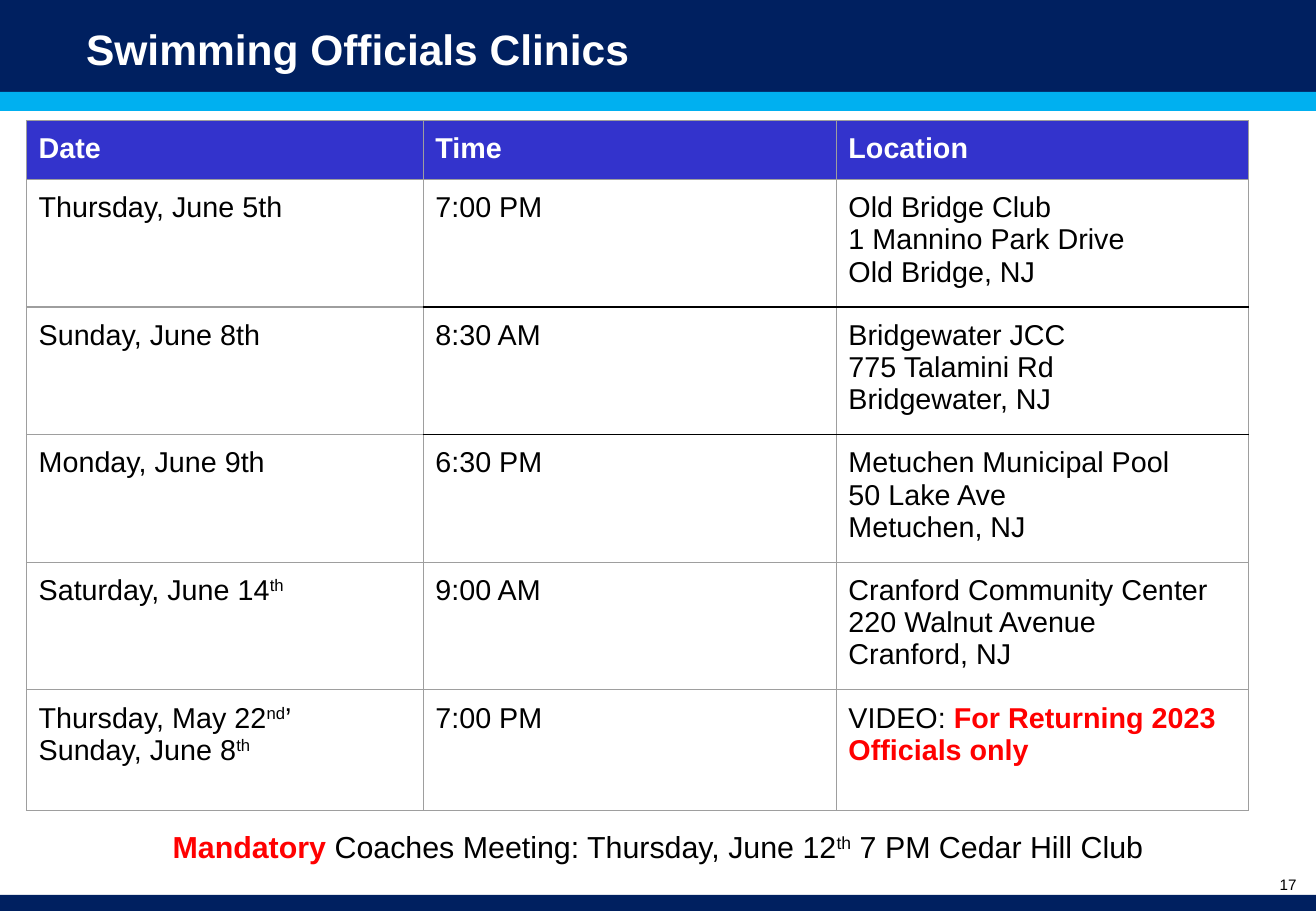
import pptx
import pptx.dml.color
import pptx.enum.shapes
import pptx.enum.text
import pptx.oxml
import pptx.oxml.ns
import pptx.util

Pt = pptx.util.Pt
ALIGN = pptx.enum.text.PP_ALIGN
ANCHOR = pptx.enum.text.MSO_ANCHOR
COLORS = {
    "navy": "002060", "sky": "00B0F0", "header": "3333CC", "grid": "9E9E9E",
    "black": "000000", "white": "FFFFFF", "red": "FF0000",
}
STYLES = {
    "body": {"bold": False, "color": "black"},
    "sup": {"bold": False, "color": "black", "baseline": "30000"},
    "alert": {"bold": True, "color": "red"},
    "heading": {"bold": True, "color": "white"},
}
HEADERS = ["Date", "Time", "Location"]
CLINICS = [
    (["Thursday, June 5th"], "7:00 PM",
     ["Old Bridge Club", "1 Mannino Park Drive", "Old Bridge, NJ"]),
    (["Sunday, June 8th"], "8:30 AM",
     ["Bridgewater JCC", "775 Talamini Rd", "Bridgewater, NJ"]),
    (["Monday, June 9th"], "6:30 PM",
     ["Metuchen Municipal Pool", "50 Lake Ave", "Metuchen, NJ"]),
    ([[("Saturday, June 14", "body"), ("th", "sup")]], "9:00 AM",
     ["Cranford Community Center", "220 Walnut Avenue", "Cranford, NJ"]),
    ([[("Thursday, May 22", "body"), ("nd", "sup"), ("’", "body")],
      [("Sunday, June 8", "body"), ("th", "sup")]], "7:00 PM",
     [[("VIDEO: ", "body"), ("For Returning 2023 Officials only", "alert")]]),
]
MEETING = [
    ("Mandatory", "alert"), (" Coaches Meeting: Thursday, June 12", "body"),
    ("th", "sup"), (" 7 PM Cedar Hill Club", "body"),
]


class Deck:
    font = "Arial"

    def __init__(self, width, height):
        self.prs = pptx.Presentation()
        self.prs.slide_width, self.prs.slide_height = Pt(width), Pt(height)
        self.s = self.prs.slides.add_slide(self.prs.slide_layouts[6])

    def rgb(self, name):
        return pptx.dml.color.RGBColor.from_string(COLORS[name])

    def fill_text(self, tf, paragraphs, size, style="body", align=ALIGN.LEFT):
        for i, line in enumerate(paragraphs):
            p = tf.paragraphs[0] if i == 0 else tf.add_paragraph()
            p.alignment = align
            for text, name in [(line, style)] if isinstance(line, str) else line:
                fmt = STYLES[name]
                r = p.add_run()
                r.text = text
                for key, value in {"name": self.font, "size": Pt(size), "bold": fmt["bold"]}.items():
                    setattr(r.font, key, value)
                r.font.color.rgb = self.rgb(fmt["color"])
                if "baseline" in fmt:
                    r._r.get_or_add_rPr().set("baseline", fmt["baseline"])

    def bar(self, x, y, w, h, color):
        sp = self.s.shapes.add_shape(
            pptx.enum.shapes.MSO_SHAPE.RECTANGLE, Pt(x), Pt(y), Pt(w), Pt(h))
        sp.shadow.inherit = False
        sp.fill.solid()
        sp.fill.fore_color.rgb = self.rgb(color)
        sp.line.fill.background()

    def text(self, x, y, w, h, paragraphs, size, style="body",
             align=ALIGN.LEFT, anchor=ANCHOR.TOP, inset=3.6):
        tf = self.s.shapes.add_textbox(Pt(x), Pt(y), Pt(w), Pt(h)).text_frame
        frame = {"word_wrap": True, "vertical_anchor": anchor,
                 "margin_top": Pt(inset), "margin_bottom": Pt(inset)}
        for key, value in frame.items():
            setattr(tf, key, value)
        self.fill_text(tf, paragraphs, size, style, align)

    def borders(self, cell, top, bottom):
        tcPr = cell._tc.get_or_add_tcPr()
        sides = {"lnL": "grid", "lnR": "grid", "lnT": top, "lnB": bottom}
        for i, (tag, color) in enumerate(sides.items()):
            tcPr.insert(i, pptx.oxml.parse_xml(
                f'<a:{tag} {pptx.oxml.ns.nsdecls("a")} w="{Pt(0.75)}"><a:solidFill>'
                f'<a:srgbClr val="{COLORS[color]}"/></a:solidFill></a:{tag}>'))

    def table(self, x, y, widths, heights, rows, size, dark_edges):
        tbl = self.s.shapes.add_table(
            len(rows), len(widths), Pt(x), Pt(y), Pt(sum(widths)), Pt(sum(heights))).table
        tbl.first_row = tbl.horz_banding = False
        for column, width in zip(tbl.columns, widths):
            column.width = Pt(width)
        for i, (row, height) in enumerate(zip(rows, heights)):
            tbl.rows[i].height = Pt(height)
            for j, paragraphs in enumerate(row):
                cell = tbl.cell(i, j)
                for side in ("left", "right", "top", "bottom"):
                    setattr(cell, f"margin_{side}", Pt(7.2))
                if i == 0:
                    cell.fill.solid()
                    cell.fill.fore_color.rgb = self.rgb("header")
                else:
                    cell.fill.background()
                edges = ["black" if (edge, j) in dark_edges else "grid" for edge in (i, i + 1)]
                self.borders(cell, *edges)
                self.fill_text(cell.text_frame, paragraphs, size, "body" if i else "heading")


def main():
    width, height = 780, 540
    deck = Deck(width, height)
    deck.bar(0, 0, width, 56, "navy")
    deck.bar(0, 530.5, width, 9.5, "navy")
    deck.bar(0, 54.5, width, 11.3, "sky")
    deck.text(44, 9.5, 720, 39, ["Swimming Officials Clinics"], 25.2, "heading",
              anchor=ANCHOR.MIDDLE)
    deck.text(726.5, 515.5, 49, 24, ["17"], 9, align=ALIGN.RIGHT)
    rows = [[[name] for name in HEADERS]]
    rows += [[dates, [time], place] for dates, time, place in CLINICS]
    deck.table(15.7, 71.5, [235.2, 244.8, 244.2], [33.2] + [71.5] * len(CLINICS), rows, 17,
               {(edge, column) for edge in (2, 3) for column in (1, 2)})
    deck.text(33, 484, 714, 36, [MEETING], 18, align=ALIGN.CENTER, inset=7.2)
    deck.prs.save("out.pptx")


if __name__ == "__main__":
    main()
